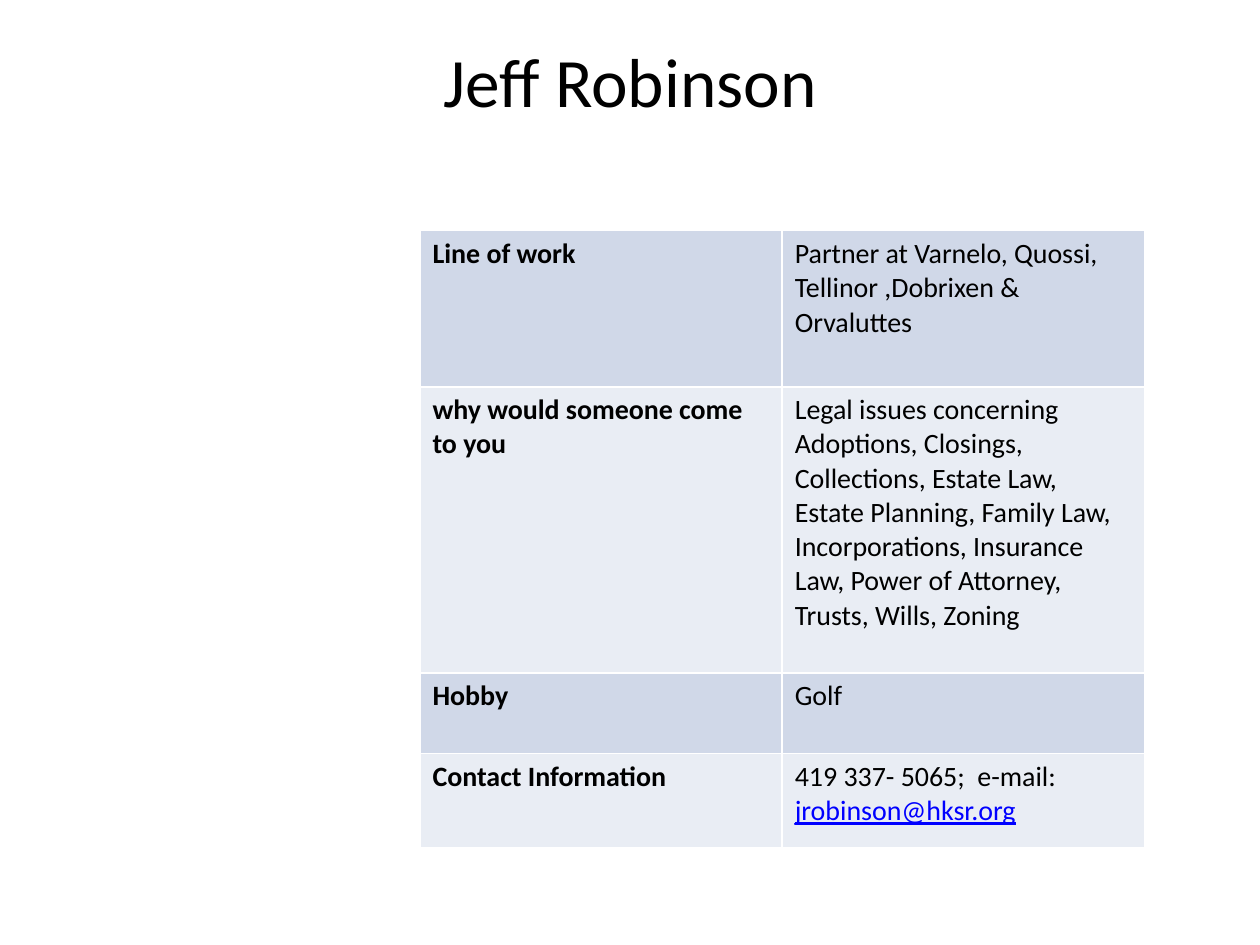
from dataclasses import dataclass

from lxml import etree
from pptx import Presentation
from pptx.dml.color import RGBColor
from pptx.enum.text import MSO_ANCHOR, PP_ALIGN
from pptx.oxml.ns import qn
from pptx.util import Inches, Pt

TOP = MSO_ANCHOR.TOP
CENTER = PP_ALIGN.CENTER
FONT = "Calibri"
BLACK, WHITE, LINK = "000000", "FFFFFF", "0000FF"
BANDS = ("D0D8E8", "E9EDF4")
WIDTH, HEIGHT = Inches(10), Inches(7.5)
BORDER = Pt(1)


@dataclass
class Row:
    label: str
    value: str
    height: float
    link: str = ""


ROWS = [
    Row("Line of work", "Partner at Varnelo, Quossi, Tellinor ,Dobrixen & Orvaluttes", 1.24),
    Row(
        "why would someone come to you",
        "Legal issues concerning Adoptions, Closings, Collections, Estate Law, "
        "Estate Planning, Family Law, Incorporations, Insurance Law, "
        "Power of Attorney, Trusts, Wills, Zoning",
        2.27,
    ),
    Row("Hobby", "Golf", 0.64),
    Row("Contact Information", "419 337- 5065;  e-mail: ", 0.75, "jrobinson@hksr.org"),
]


def rgb(color: str) -> RGBColor:
    return RGBColor.from_string(color)


def set_font(font, size: float, bold: bool = False) -> None:
    font.name, font.size, font.bold = FONT, Pt(size), bold
    font.color.rgb = rgb(BLACK)


def add_borders(cell) -> None:
    tc_pr = cell._tc.get_or_add_tcPr()
    for i, side in enumerate(("lnL", "lnR", "lnT", "lnB")):
        ln = etree.Element(qn(f"a:{side}"), w=str(BORDER))
        fill = etree.SubElement(ln, qn("a:solidFill"))
        etree.SubElement(fill, qn("a:srgbClr"), val=WHITE)
        tc_pr.insert(i, ln)


def fill_cell(cell, text: str, color: str, bold: bool, link: str = "") -> None:
    cell.fill.solid()
    cell.fill.fore_color.rgb = rgb(color)
    add_borders(cell)
    p = cell.text_frame.paragraphs[0]
    set_font(p.font, 16, bold)
    for content in filter(None, (text, link)):
        r = p.add_run()
        r.text = content
        set_font(r.font, 16, bold)
    if link:
        r.font.color.rgb = rgb(LINK)
        r.font.underline = True


def add_title(s, text: str) -> None:
    sp = s.shapes.add_textbox(
        int(WIDTH * 0.05), int(HEIGHT * 0.04), int(WIDTH * 0.9), Inches(1.25)
    )
    tf = sp.text_frame
    tf.word_wrap = True
    tf.vertical_anchor = TOP
    tf.margin_top = tf.margin_bottom = 0
    p = tf.paragraphs[0]
    p.text = text
    p.alignment = CENTER
    set_font(p.font, 39.6)


def add_profile(s, rows: list[Row]) -> None:
    height = Inches(sum(row.height for row in rows))
    table = s.shapes.add_table(
        len(rows), 2, int(WIDTH / 3), Inches(1.83), Inches(5.75), height
    ).table
    table.first_row = False
    for i, row in enumerate(rows):
        table.rows[i].height = Inches(row.height)
        color = BANDS[i % 2]
        fill_cell(table.cell(i, 0), row.label, color, True)
        fill_cell(table.cell(i, 1), row.value, color, False, row.link)


def main() -> None:
    prs = Presentation()
    prs.slide_width, prs.slide_height = WIDTH, HEIGHT
    s = prs.slides.add_slide(prs.slide_layouts[6])
    add_title(s, "Jeff Robinson")
    add_profile(s, ROWS)
    prs.save("out.pptx")


if __name__ == "__main__":
    main()
